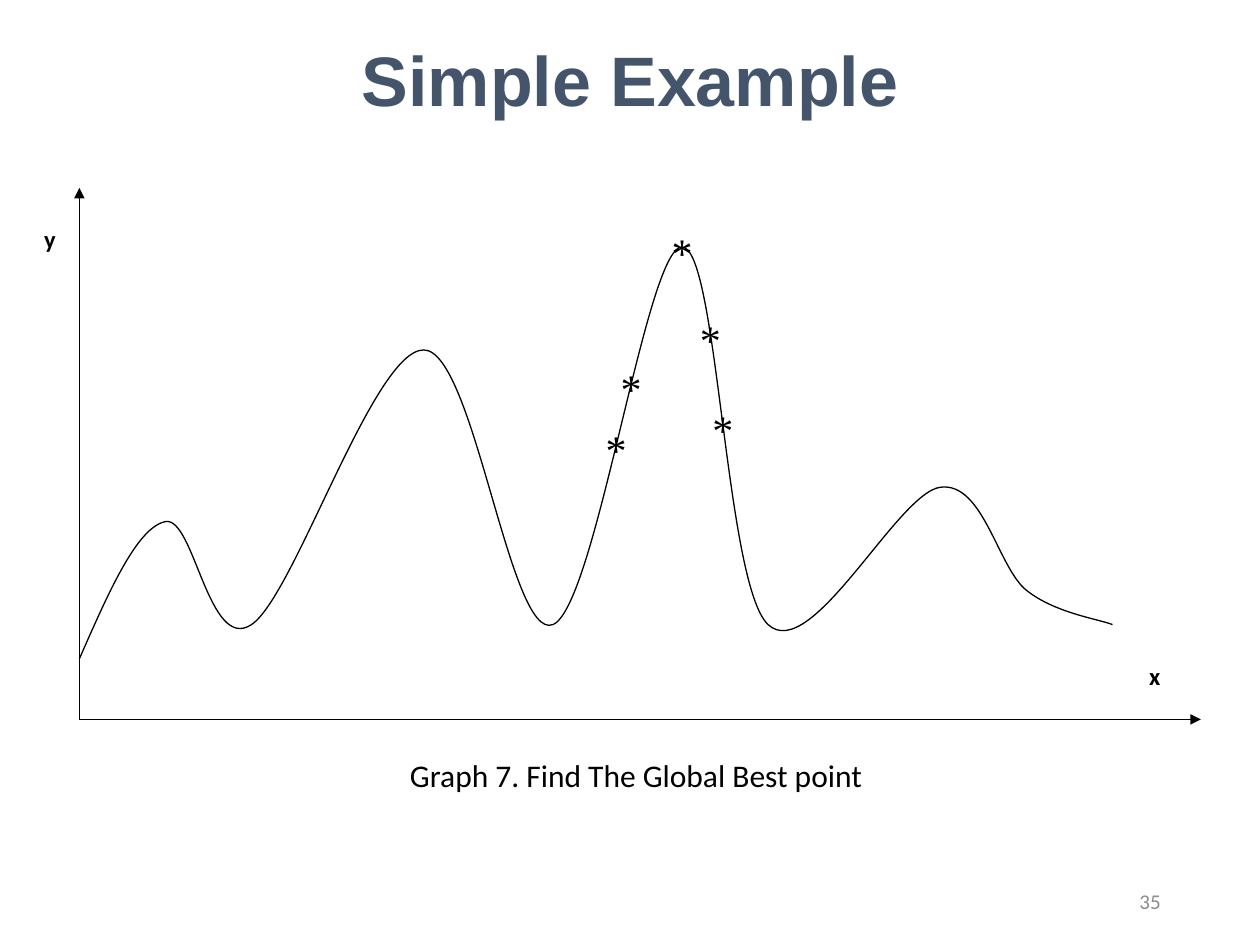
from dataclasses import dataclass

from lxml import etree
from pptx import Presentation
from pptx.dml.color import RGBColor
from pptx.enum.shapes import MSO_CONNECTOR
from pptx.enum.text import MSO_ANCHOR, MSO_AUTO_SIZE, PP_ALIGN
from pptx.oxml.ns import qn
from pptx.util import Inches, Pt

STRAIGHT = MSO_CONNECTOR.STRAIGHT
TOP, MIDDLE = MSO_ANCHOR.TOP, MSO_ANCHOR.MIDDLE
LEFT, CENTER, RIGHT = PP_ALIGN.LEFT, PP_ALIGN.CENTER, PP_ALIGN.RIGHT
FIT_SHAPE = MSO_AUTO_SIZE.SHAPE_TO_FIT_TEXT
TITLE_ONLY = 5

COLORS = {"ink": "000000", "title": "44546A", "number": "8C8C8C"}

# Curve knots as (column, row); the curve bends through them from LEAD_IN.
LEAD_IN = (-2, 19.4)
KNOTS = [(0, 12), (2, 8), (4, 11), (8, 3), (11, 11),
         (14, 0), (16, 11), (20, 7), (22, 10), (24, 11)]
AXIS_ROW, AXIS_TOP, AXIS_END = 13.76, -1.72, 26.05

# Particles as (centre column, top row, columns wide, rows high).
PARTICLES = [(14, -0.59, 0.73, 1.47), (12.46, 5.14, 0.47, 0.59),
             (12.81, 3.38, 0.47, 0.59), (14.65, 1.94, 0.47, 0.59),
             (14.94, 4.55, 0.47, 0.59)]


@dataclass
class Grid:
    """Columns and rows that divide a box given in inches."""
    left: float
    top: float
    width: float
    height: float
    columns: int
    rows: int

    def point(self, column, row):
        return (Inches(self.left + column * self.width / self.columns),
                Inches(self.top + row * self.height / self.rows))

    def box(self, column, row, wide, high):
        return (*self.point(column, row),
                Inches(wide * self.width / self.columns),
                Inches(high * self.height / self.rows))


def style_text(text_frame, text, size, font, color, align, bold=False):
    text_frame.text = text
    paragraph = text_frame.paragraphs[0]
    paragraph.alignment = align
    run_font = paragraph.runs[0].font
    run_font.size, run_font.name, run_font.bold = Pt(size), font, bold
    run_font.color.rgb = RGBColor.from_string(COLORS[color])


def add_text(shapes, box, text, size, font="Calibri", color="ink",
             align=LEFT, anchor=TOP, bold=False, inset=True):
    text_frame = shapes.add_textbox(*box).text_frame
    text_frame.word_wrap = True
    text_frame.vertical_anchor = anchor
    if not inset:
        text_frame.margin_left = text_frame.margin_right = 0
        text_frame.margin_top = text_frame.margin_bottom = 0
    style_text(text_frame, text, size, font, color, align, bold)
    return text_frame


def style_line(line):
    line.color.rgb = RGBColor.from_string(COLORS["ink"])
    line.width = Pt(0.75)


def add_axis(shapes, start, end):
    axis = shapes.add_connector(STRAIGHT, *start, *end)
    style_line(axis.line)
    properties = axis.line._get_or_add_ln()
    etree.SubElement(properties, qn("a:tailEnd"), type="triangle")
    etree.SubElement(axis._element.spPr, qn("a:effectLst"))


def bezier_points(knots, lead_in):
    """Return two control points and an end point for each span."""
    padded = [lead_in, *knots, knots[-1]]
    points = []
    for before, start, end, after in zip(padded, padded[1:], padded[2:], padded[3:]):
        points.append(tuple(s + (e - b) / 6 for b, s, e in zip(before, start, end)))
        points.append(tuple(e - (a - s) / 6 for s, e, a in zip(start, end, after)))
        points.append(end)
    return points


def add_curve(shapes, grid):
    builder = shapes.build_freeform(*grid.point(*KNOTS[0]))
    builder.add_line_segments(
        [grid.point(*point) for point in bezier_points(KNOTS, LEAD_IN)], close=False)
    curve = builder.convert_to_shape()
    curve.shadow.inherit = False
    curve.fill.background()
    style_line(curve.line)
    outline = next(curve._element.iter(qn("a:pathLst")))[0]
    segments = outline.findall(qn("a:lnTo"))
    for index in range(0, len(segments), 3):
        bend = etree.SubElement(outline, qn("a:cubicBezTo"))
        for segment in segments[index:index + 3]:
            bend.append(segment[0])
            outline.remove(segment)


def add_graph(slide, grid):
    shapes = slide.shapes.add_group_shape().shapes
    origin = grid.point(0, AXIS_ROW)
    add_text(shapes, grid.box(24.85, 12.07, 1.37, 1.72), "x", 14, bold=True, inset=False)
    add_axis(shapes, origin, grid.point(0, AXIS_TOP))
    add_axis(shapes, origin, grid.point(AXIS_END, AXIS_ROW))
    add_curve(shapes, grid)
    add_text(shapes, grid.box(-0.82, -0.66, 1.37, 1.72), "y", 14, bold=True, inset=False)


def add_particles(slide, grid):
    for center, row, wide, high in PARTICLES:
        add_text(slide.shapes, grid.box(center - wide / 2, row, wide, high), "*", 24,
                 font="Times New Roman", align=CENTER, inset=False)


def add_title(slide, box):
    title = slide.shapes.title
    title.left, title.top, title.width, title.height = box
    title.text_frame.vertical_anchor = MIDDLE
    style_text(title.text_frame, "Simple Example", 40, "Arial", "title", CENTER, bold=True)
    paragraph = title.text_frame.paragraphs[0]
    paragraph.space_before, paragraph.space_after = Pt(12), Pt(3)


def add_caption(slide, box):
    caption = add_text(slide.shapes, box, "Graph 7. Find The Global Best point", 18,
                       align=CENTER, anchor=MIDDLE)
    caption.word_wrap = False
    caption.auto_size = FIT_SHAPE


def main():
    presentation = Presentation()
    presentation.slide_width, presentation.slide_height = Inches(10), Inches(7.5)
    slide = presentation.slides.add_slide(presentation.slide_layouts[TITLE_ONLY])
    page = Grid(0, 0, 10, 7.5, 100, 75)
    plot = Grid(0.63, 1.96, 8.2, 3.27, 24, 12)

    add_title(slide, page.box(0, 0, 100, 12.5))
    add_text(slide.shapes, page.box(70.6, 69.5, 22.5, 4), "35", 12,
             color="number", align=RIGHT, anchor=MIDDLE)
    add_graph(slide, plot)
    add_particles(slide, plot)
    add_caption(slide, page.box(29.5, 59.5, 42, 4))
    presentation.save("out.pptx")


if __name__ == "__main__":
    main()
